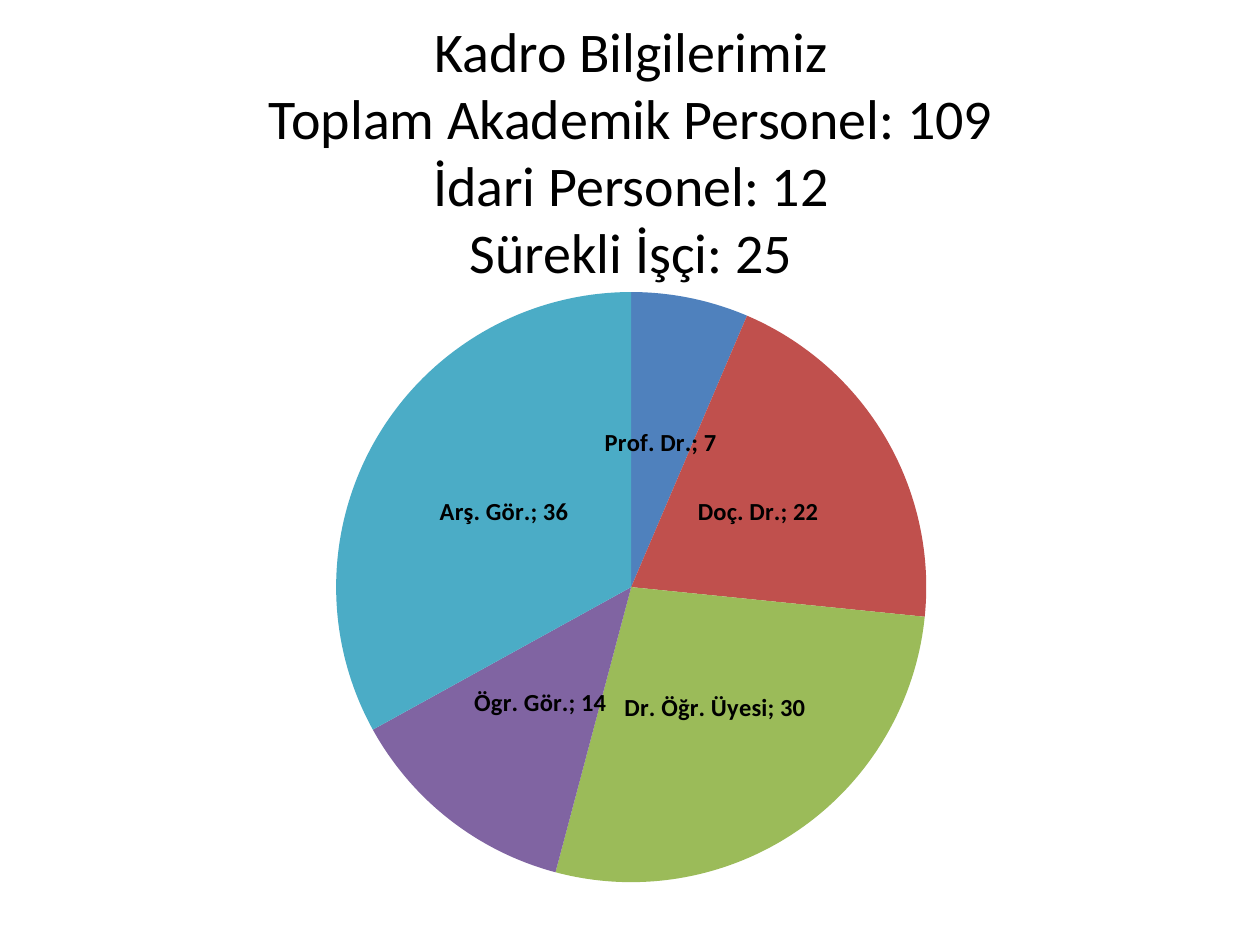
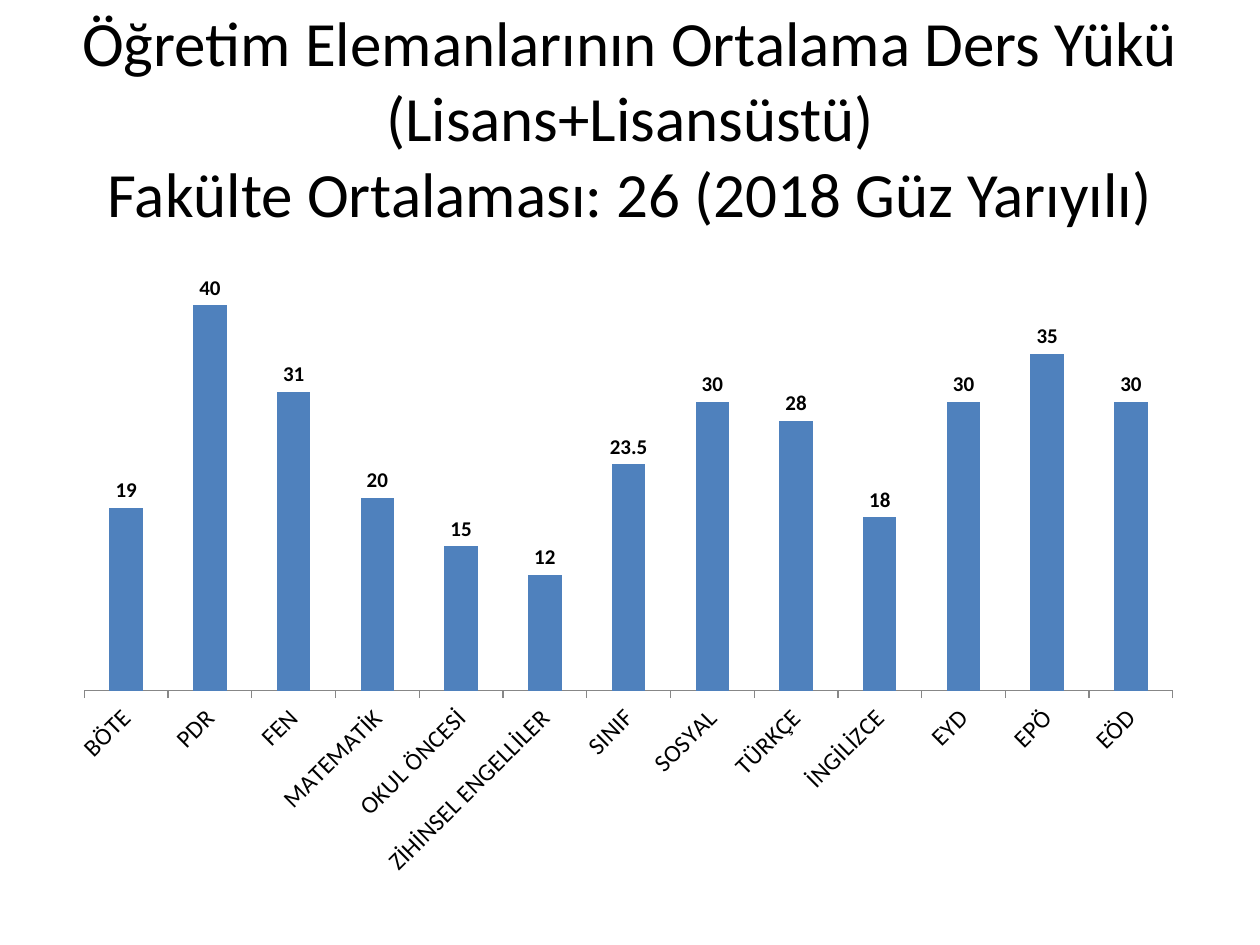
from lxml import etree
from pptx import Presentation
from pptx import util as u
from pptx.chart.data import CategoryChartData
from pptx.dml.color import RGBColor
from pptx.enum import chart as charts, text
from pptx.oxml import ns

STAFF_TITLE = [
    "Kadro Bilgilerimiz",
    "Toplam Akademik Personel: 109",
    "İdari Personel: 12",
    "Sürekli İşçi: 25",
]
STAFF = {"Prof. Dr.": 7, "Doç. Dr.": 22, "Dr. Öğr. Üyesi": 30, "Ögr. Gör.": 14, "Arş. Gör.": 36}

LOAD_TITLE = [
    "Öğretim Elemanlarının Ortalama Ders Yükü (Lisans+Lisansüstü)",
    "Fakülte Ortalaması: 26 (2018 Güz Yarıyılı)",
]
LOAD = {
    "BÖTE": 19, "PDR": 40, "FEN": 31, "MATEMATİK": 20, "OKUL ÖNCESİ": 15,
    "ZİHİNSEL ENGELLİLER": 12, "SINIF": 23.5, "SOSYAL": 30, "TÜRKÇE": 28,
    "İNGİLİZCE": 18, "EYD": 30, "EPÖ": 35, "EÖD": 30,
}

COLORS = {
    "ink": "000000", "axis": "878787", "blue": "4F81BD", "red": "C0504D",
    "green": "9BBB59", "purple": "8064A2", "teal": "4BACC6",
}
SLICES = ["blue", "red", "green", "purple", "teal"]
FONT = "Calibri"


def color(name):
    return RGBColor.from_string(COLORS[name])


def style(font, size, bold=False):
    font.name, font.size, font.bold = FONT, u.Pt(size), bold
    font.color.rgb = color("ink")


def fill(part, name):
    part.format.fill.solid()
    part.format.fill.fore_color.rgb = color(name)


def add_title(page, lines, area, size):
    frame = page.shapes.add_textbox(*map(u.Inches, area)).text_frame
    frame.word_wrap = True
    frame.vertical_anchor = text.MSO_ANCHOR.MIDDLE
    frame.text = "\v".join(lines)
    para = frame.paragraphs[0]
    para.alignment = text.PP_ALIGN.CENTER
    for span in para.runs:
        style(span.font, size)


def add_chart(page, kind, values, area, label_size):
    data = CategoryChartData()
    data.categories = list(values)
    data.add_series("Series 1", list(values.values()))
    chart = page.shapes.add_chart(kind, *map(u.Inches, area), data).chart
    chart.has_title = chart.has_legend = False
    style(chart.font, 10)
    plot = chart.plots[0]
    plot.has_data_labels = True
    plot.data_labels.show_value = True
    style(plot.data_labels.font, label_size, True)
    return chart, plot


def add_staff_page(deck):
    page = deck.slides.add_slide(deck.slide_layouts[6])
    add_title(page, STAFF_TITLE, (0.51, 0.21, 9, 1.97), 32)
    chart, plot = add_chart(page, charts.XL_CHART_TYPE.PIE, STAFF, (0.51, 2.18, 9, 4.96), 14)
    plot.vary_by_categories = True
    for index, name in enumerate(SLICES):
        fill(plot.series[0].points[index], name)
    labels = plot.data_labels
    labels.show_category_name = True
    labels.show_percentage = False
    labels.position = charts.XL_LABEL_POSITION.CENTER
    separator = etree.Element(ns.qn("c:separator"))
    separator.text = "; "
    last_flag = chart.element.find(".//" + ns.qn("c:showPercent"))
    bubble = last_flag.getparent().find(ns.qn("c:showBubbleSize"))
    (last_flag if bubble is None else bubble).addnext(separator)


def add_load_page(deck):
    page = deck.slides.add_slide(deck.slide_layouts[6])
    add_title(page, LOAD_TITLE, (0.5, 0.3, 9, 1.25), 36)
    chart, plot = add_chart(
        page, charts.XL_CHART_TYPE.COLUMN_CLUSTERED, LOAD, (0.43, 1.94, 9.06, 5.12), 12)
    plot.vary_by_categories = False
    plot.gap_width = 150
    plot.data_labels.position = charts.XL_LABEL_POSITION.OUTSIDE_END
    fill(plot.series[0], "blue")
    departments, hours = chart.category_axis, chart.value_axis
    style(departments.tick_labels.font, 14)
    departments.major_tick_mark = charts.XL_TICK_MARK.OUTSIDE
    departments.format.line.color.rgb = color("axis")
    hours.has_major_gridlines = False
    hours.minimum_scale, hours.maximum_scale = 0, 45
    hours.visible = False


def main():
    deck = Presentation()
    deck.slide_width, deck.slide_height = u.Inches(10), u.Inches(7.5)
    add_staff_page(deck)
    add_load_page(deck)
    deck.save("out.pptx")


if __name__ == "__main__":
    main()
